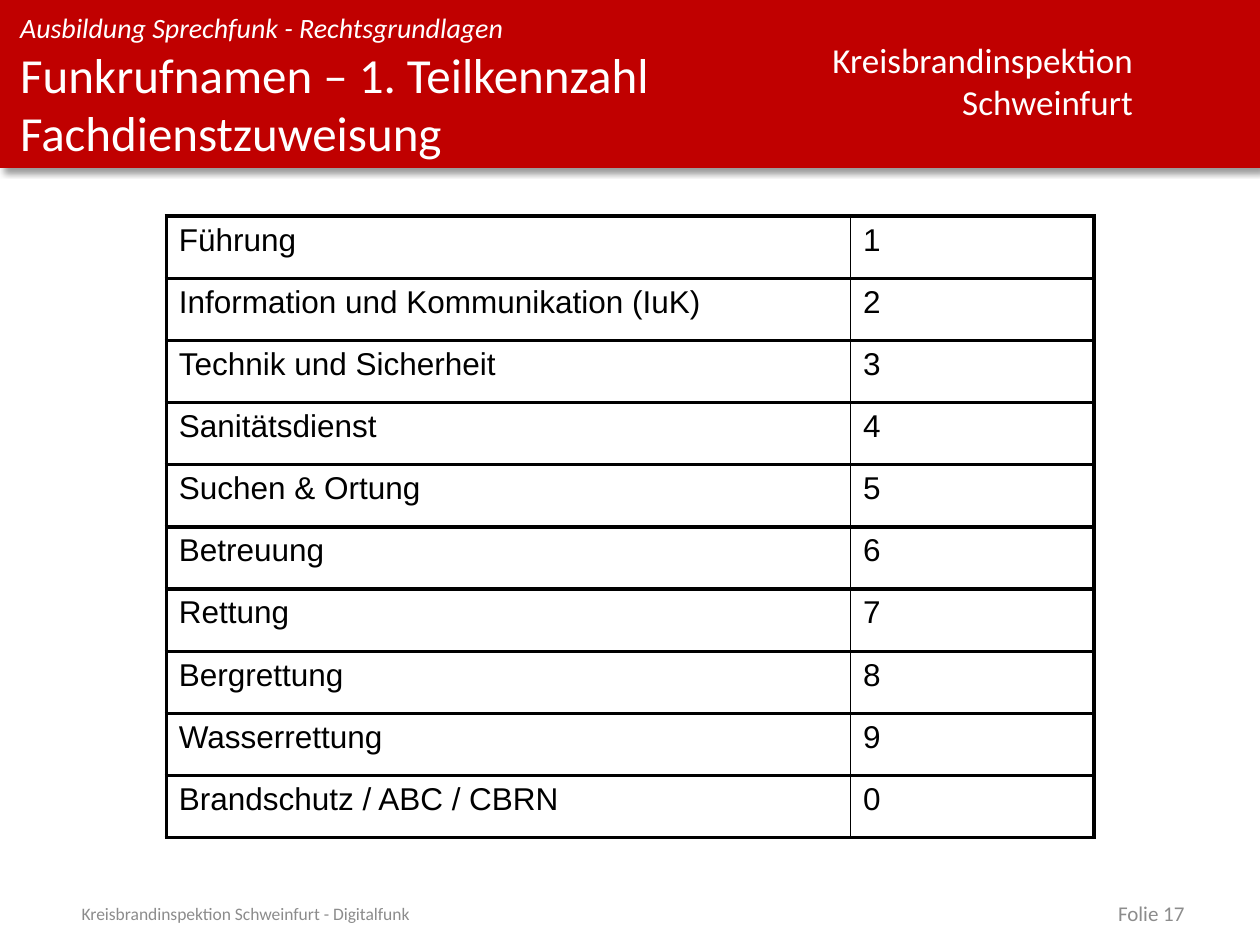
from copy import deepcopy

from lxml.etree import SubElement
from pptx import Presentation
from pptx.dml.color import RGBColor
from pptx.enum.shapes import MSO_SHAPE
from pptx.enum.text import MSO_ANCHOR as Anchor, MSO_AUTO_SIZE as AutoSize, PP_ALIGN as Align
from pptx.oxml import parse_xml
from pptx.oxml.ns import qn
from pptx.util import Pt

RED = RGBColor(0xC0, 0x00, 0x00)
WHITE = RGBColor(0xFF, 0xFF, 0xFF)
GRAY = RGBColor(0x8C, 0x8C, 0x8C)
BLACK = RGBColor(0x00, 0x00, 0x00)

TITLE = "Funkrufnamen – 1. Teilkennzahl\vFachdienstzuweisung"
TOPIC = "Ausbildung Sprechfunk - Rechtsgrundlagen"
OFFICE = "Kreisbrandinspektion\nSchweinfurt"
FOOTER = "Kreisbrandinspektion Schweinfurt - Digitalfunk"
PAGE_NUMBER = "Folie 17"
SERVICES = [
    ("Führung", "1"),
    ("Information und Kommunikation (IuK)", "2"),
    ("Technik und Sicherheit", "3"),
    ("Sanitätsdienst", "4"),
    ("Suchen & Ortung", "5"),
    ("Betreuung", "6"),
    ("Rettung", "7"),
    ("Bergrettung", "8"),
    ("Wasserrettung", "9"),
    ("Brandschutz / ABC / CBRN", "0"),
]

PAGE_W, PAGE_H = 720, 540
BAND_H = 96
TABLE_LEFT, TABLE_TOP = 95, 123.5
COLUMNS = (391, 139.2)
ROW_H = 35.53
THICK, THIN = 2.25, 1

SHADOW = (
    '<a:effectLst xmlns:a="http://schemas.openxmlformats.org/drawingml/2006/main">'
    '<a:outerShdw blurRad="50800" dist="38100" dir="2700000" algn="tl" rotWithShape="0">'
    '<a:srgbClr val="000000"><a:alpha val="40000"/></a:srgbClr></a:outerShdw></a:effectLst>'
)


def format_text(frame, size, color, font="Calibri", align=Align.LEFT, italic=None):
    for para in frame.paragraphs:
        para.alignment = align
        for span in para.runs:
            span.font.name = font
            span.font.size = Pt(size)
            span.font.color.rgb = color
            span.font.italic = italic


def clear_margins(frame):
    frame.margin_left = frame.margin_top = frame.margin_right = frame.margin_bottom = 0


def add_text(page, text, left, top, width, height, size, color, wrap=True, **style):
    box = page.shapes.add_textbox(Pt(left), Pt(top), Pt(width), Pt(height))
    frame = box.text_frame
    frame.text = text
    frame.word_wrap = wrap
    format_text(frame, size, color, **style)
    return frame


def set_borders(cell, **widths):
    properties = cell._tc.get_or_add_tcPr()
    for index, (side, width) in enumerate(widths.items()):
        line = SubElement(properties, qn(f"a:ln{side}"), w=str(Pt(width)))
        fill = SubElement(line, qn("a:solidFill"))
        SubElement(fill, qn("a:srgbClr"), val=str(BLACK))
        properties.insert(index, line)


def add_header(page):
    band = page.shapes.add_shape(MSO_SHAPE.RECTANGLE, 0, 0, Pt(PAGE_W), Pt(BAND_H))
    band.fill.solid()
    band.fill.fore_color.rgb = RED
    band.line.fill.background()
    band._element.spPr.append(parse_xml(SHADOW))

    office = add_text(page, OFFICE, 466.5, 18.7, 188, 55.4, 20, WHITE,
                      wrap=False, align=Align.RIGHT)
    office.auto_size = AutoSize.SHAPE_TO_FIT_TEXT
    topic = add_text(page, TOPIC, 11.5, 5.8, 455, 19.4, 16, WHITE, italic=True)
    clear_margins(topic)

    title = page.shapes.title
    title.left, title.top, title.width, title.height = Pt(11.5), Pt(25.2), Pt(455), Pt(71)
    frame = title.text_frame
    frame.text = TITLE
    frame.auto_size = AutoSize.NONE
    frame.vertical_anchor = Anchor.TOP
    clear_margins(frame)
    format_text(frame, 28, WHITE)
    # The line break needs the run's size too, or it stretches the line.
    para = frame.paragraphs[0]
    para._p.find(qn("a:br")).append(deepcopy(para.runs[0]._r.rPr))
    # Put the title in front of the band.
    band._element.addnext(title._element)


def add_services(page):
    shape = page.shapes.add_table(len(SERVICES), len(COLUMNS), Pt(TABLE_LEFT), Pt(TABLE_TOP),
                                  Pt(sum(COLUMNS)), Pt(ROW_H * len(SERVICES)))
    table = shape.table
    table.first_row = table.horz_banding = False
    for column, width in zip(table.columns, COLUMNS):
        column.width = Pt(width)
    for row, service in zip(table.rows, SERVICES):
        row.height = Pt(ROW_H)
        for index, (cell, text) in enumerate(zip(row.cells, service)):
            cell.text = text
            cell.fill.background()
            format_text(cell.text_frame, 18, BLACK, font="Arial")
            left, right = (THICK, THIN) if index == 0 else (THIN, THICK)
            set_borders(cell, L=left, R=right, T=THICK, B=THICK)


def add_footer(page):
    for text, left, width, size, align in (
        (FOOTER, 39.6, 435, 10, Align.LEFT),
        (PAGE_NUMBER, 516.2, 167.8, 12, Align.RIGHT),
    ):
        frame = add_text(page, text, left, 514.8, width, 14.4, size, GRAY, align=align)
        frame.vertical_anchor = Anchor.MIDDLE


def main():
    deck = Presentation()
    deck.slide_width, deck.slide_height = Pt(PAGE_W), Pt(PAGE_H)
    page = deck.slides.add_slide(deck.slide_layouts[5])
    add_header(page)
    add_services(page)
    add_footer(page)
    deck.save("out.pptx")


if __name__ == "__main__":
    main()
